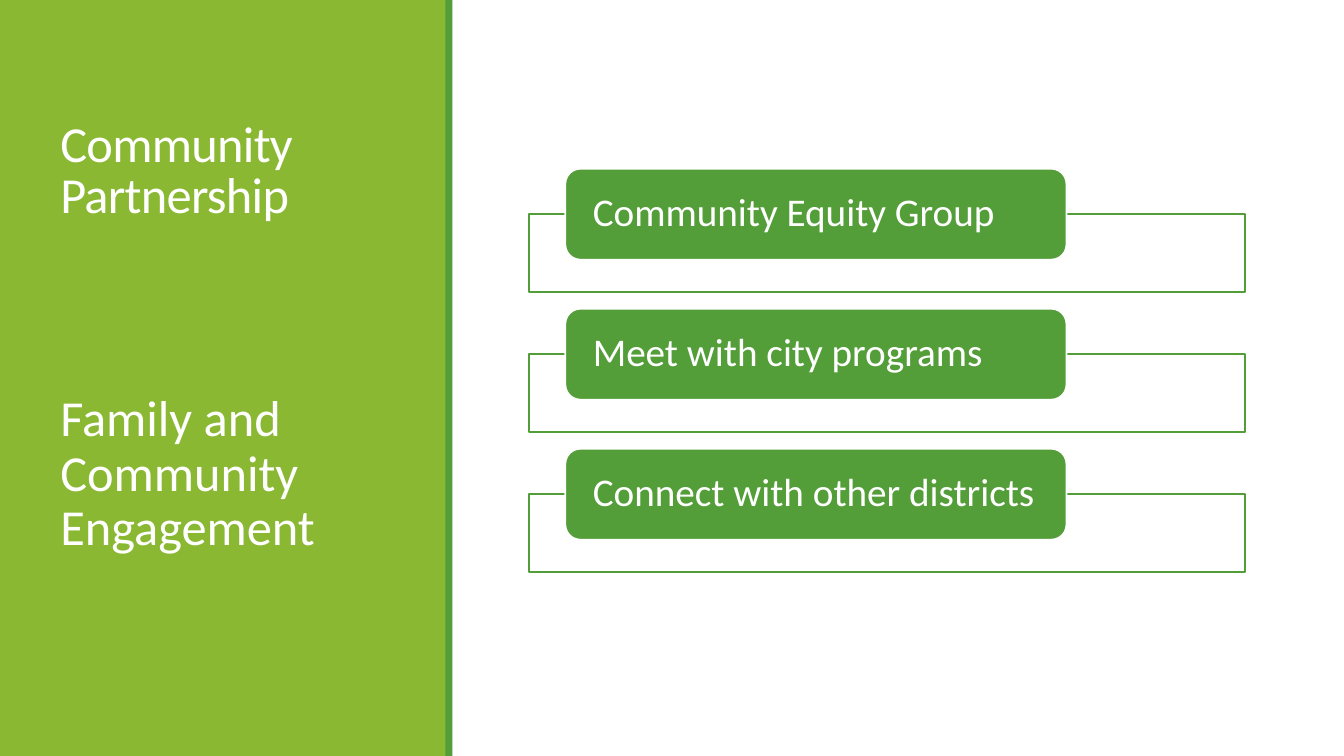
"""Build the community partnership slide."""
from dataclasses import dataclass

from pptx import Presentation
from pptx.dml.color import RGBColor
from pptx.enum import shapes as sh, text as tx
from pptx.util import Pt

WHITE = RGBColor(0xFF, 0xFF, 0xFF)
LIME = RGBColor(0x8A, 0xB8, 0x33)
GREEN = RGBColor(0x54, 0x9E, 0x39)
RECT = sh.MSO_SHAPE.RECTANGLE
ROUND = sh.MSO_SHAPE.ROUNDED_RECTANGLE
TOP = tx.MSO_ANCHOR.TOP
MID = tx.MSO_ANCHOR.MIDDLE
LOW = tx.MSO_ANCHOR.BOTTOM


@dataclass(frozen=True)
class Box:
    x: float
    y: float
    w: float
    h: float

    def down(self, dist: float) -> "Box":
        """Return this box moved down by a distance."""
        return Box(self.x, self.y + dist, self.w, self.h)

    def area(self) -> tuple:
        """Return the box as lengths."""
        return Pt(self.x), Pt(self.y), Pt(self.w), Pt(self.h)


FRAME = Box(378, 153, 511.2, 55.5)
PILL = Box(403.8, 120.5, 358, 65)
STEP = 100
GOALS = (
    "Community Equity Group",
    "Meet with city programs",
    "Connect with other districts",
)


def draw(slide, kind, box: Box, fill: RGBColor, line: RGBColor | None = None):
    """Add a filled shape with an optional outline."""
    shape = slide.shapes.add_shape(kind, *box.area())
    shape.shadow.inherit = False
    shape.fill.solid()
    shape.fill.fore_color.rgb = fill
    if line is None:
        shape.line.fill.background()
    else:
        shape.line.color.rgb = line
        shape.line.width = Pt(1.25)
    return shape


def write(shape, words: str, *, size: float, anchor, lead: float = 0.9,
          above: float = 0, below: float = 0, pad: tuple = (7.2, 3.6),
          track: int = 0) -> None:
    """Put formatted white text in a shape."""
    frame = shape.text_frame
    frame.word_wrap = True
    frame.vertical_anchor = anchor
    frame.margin_left = frame.margin_right = Pt(pad[0])
    frame.margin_top = frame.margin_bottom = Pt(pad[1])
    para = frame.paragraphs[0]
    para.alignment = tx.PP_ALIGN.LEFT
    para.line_spacing = lead
    para.space_before, para.space_after = Pt(above), Pt(below)
    run = para.add_run()
    run.text = words
    run.font.name = "Calibri"
    run.font.size = Pt(size)
    run.font.color.rgb = WHITE
    if track:
        run.font._element.set("spc", str(track))


def main() -> None:
    """Draw the side panel and the list of goals, then save."""
    deck = Presentation()
    deck.slide_width, deck.slide_height = Pt(960), Pt(540)
    slide = deck.slides.add_slide(deck.slide_layouts[6])

    draw(slide, RECT, Box(0, 0, 319, 540), LIME)
    draw(slide, RECT, Box(318.2, 0, 5, 540), GREEN)
    title = slide.shapes.add_textbox(*Box(36, 46.8, 252, 116.6).area())
    write(title, "Community Partnership", size=36, anchor=LOW,
          lead=0.85, track=-50)

    for row, goal in enumerate(GOALS):
        draw(slide, RECT, FRAME.down(row * STEP), WHITE, GREEN)
        pill = draw(slide, ROUND, PILL.down(row * STEP), GREEN, WHITE)
        write(pill, goal, size=28, anchor=MID, pad=(16.5, 0))

    body = slide.shapes.add_textbox(*Box(36, 277.2, 252, 219.6).area())
    write(body, "Family and Community Engagement", size=36, anchor=TOP,
          above=12, below=2)
    deck.save("out.pptx")


if __name__ == "__main__":
    main()
